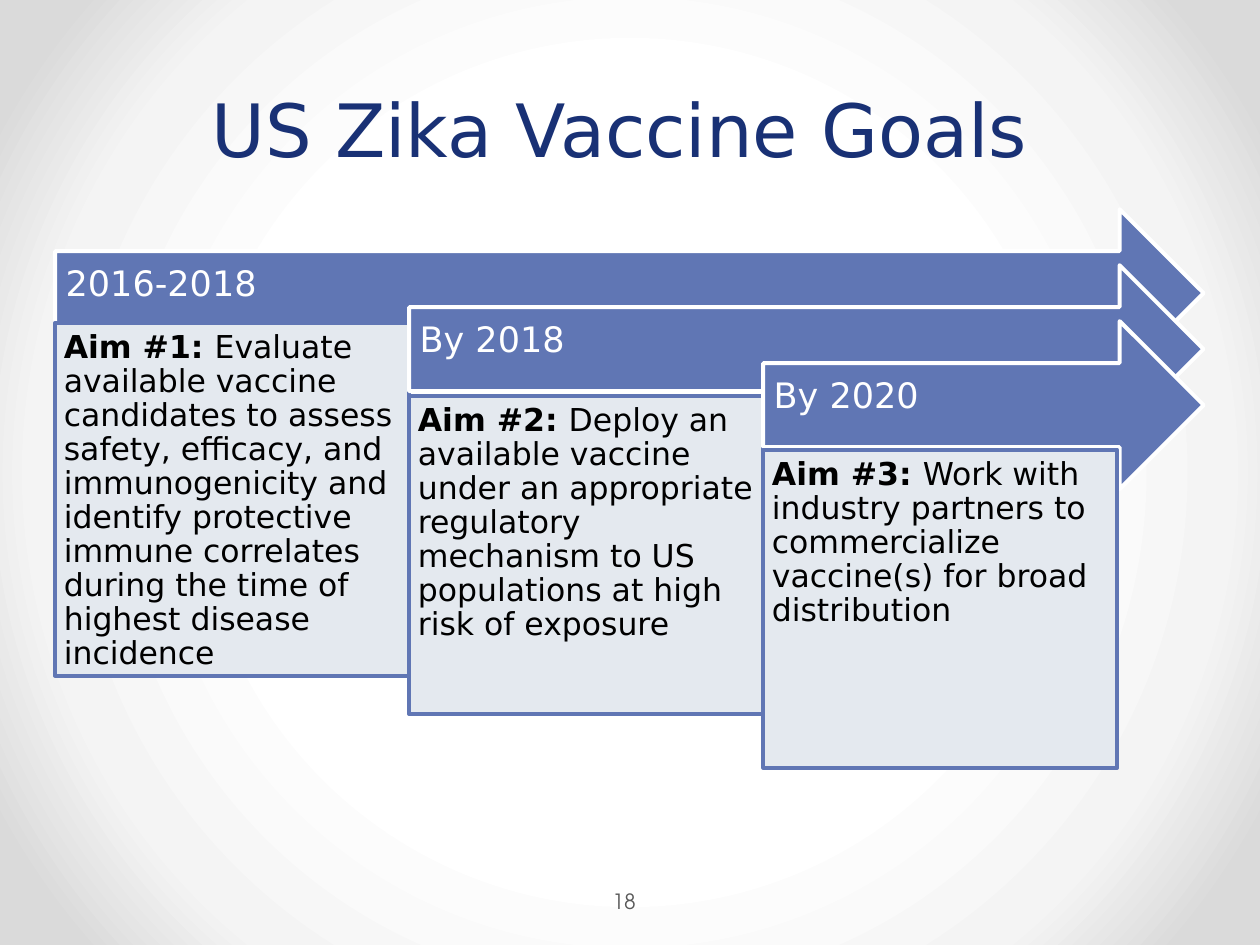
from lxml import etree
from pptx import Presentation
from pptx.dml.color import RGBColor
from pptx.enum.shapes import MSO_SHAPE as Shape
from pptx.enum.text import MSO_ANCHOR as Anchor, PP_ALIGN as Align
from pptx.oxml.ns import qn
from pptx.util import Pt

BODY_FONT = "DejaVu Sans"
NUMBER_FONT = "TeX Gyre Adventor"
BLUE, PALE, NAVY, GREY = "6076B4", "E4E9EF", "193175", "595959"
WHITE, BLACK = "FFFFFF", "000000"

BACKGROUND_STOPS = [(50, WHITE), (76, "F4F4F4"), (92, "DADADA")]

LEFT, RIGHT = 31.5, 687.8
COLUMN_WIDTH = 202.3
ARROW_TOP, ARROW_STEP, ARROW_HEIGHT = 119.5, 32, 96

# period, aim label, aim text, top and height of the aim box
GOALS = [
    ("2016-2018", "Aim #1: ",
     "Evaluate available vaccine candidates to assess safety, efficacy, and "
     "immunogenicity and identify protective immune correlates during the "
     "time of highest disease incidence", 184.4, 201.8),
    ("By 2018", "Aim #2: ",
     "Deploy an available vaccine under an appropriate regulatory mechanism "
     "to US populations at high risk of exposure", 226.2, 181.8),
    ("By 2020", "Aim #3: ",
     "Work with industry partners to commercialize vaccine(s) for broad "
     "distribution", 257, 181.8),
]


def color(hex_string):
    return RGBColor.from_string(hex_string)


def write(shape, runs, size, ink, font=BODY_FONT, align=Align.LEFT,
          anchor=Anchor.TOP, insets=(7.2, 3.6, 7.2, 3.6), spacing=None):
    """Fill a shape with one paragraph of (text, bold) runs."""
    frame = shape.text_frame
    frame.word_wrap = True
    frame.vertical_anchor = anchor
    (frame.margin_left, frame.margin_top,
     frame.margin_right, frame.margin_bottom) = map(Pt, insets)
    paragraph = frame.paragraphs[0]
    paragraph.alignment = align
    paragraph.line_spacing = spacing
    for text, bold in runs:
        run = paragraph.add_run()
        run.text = text
        run.font.name = font
        run.font.size = Pt(size)
        run.font.bold = bold
        run.font.color.rgb = color(ink)


def add_panel(slide, preset, box, fill, outline):
    panel = slide.shapes.add_shape(preset, *map(Pt, box))
    panel.shadow.inherit = False
    panel.fill.solid()
    panel.fill.fore_color.rgb = color(fill)
    panel.line.color.rgb = color(outline)
    panel.line.width = Pt(2.25)
    return panel


def paint_background(slide):
    """Radial gradient spreading from the centre of the slide."""
    slide.background.fill.gradient()
    gradient = slide.element.find(".//" + qn("a:gradFill"))
    for child in list(gradient):
        gradient.remove(child)
    stops = etree.SubElement(gradient, qn("a:gsLst"))
    for position, shade in BACKGROUND_STOPS:
        stop = etree.SubElement(stops, qn("a:gs"), pos=str(position * 1000))
        etree.SubElement(stop, qn("a:srgbClr"), val=shade)
    circle = etree.SubElement(gradient, qn("a:path"), path="circle")
    etree.SubElement(circle, qn("a:fillToRect"),
                     l="50000", t="50000", r="50000", b="50000")


def add_title(slide, box):
    title = slide.shapes.add_textbox(*map(Pt, box))
    write(title, [("US Zika Vaccine Goals", False)], 42, NAVY,
          align=Align.CENTER, anchor=Anchor.BOTTOM, spacing=Pt(58))


def add_page_number(slide, box):
    number = slide.shapes.add_textbox(*map(Pt, box))
    write(number, [("18", False)], 12, GREY, font=NUMBER_FONT,
          anchor=Anchor.MIDDLE, insets=(2.2, 3.6, 3.6, 3.6))


def add_period_arrow(slide, box, period):
    arrow = add_panel(slide, Shape.RIGHT_ARROW, box, BLUE, WHITE)
    write(arrow, [(period, False)], 20, WHITE, anchor=Anchor.MIDDLE,
          insets=(6, 6, 20, 15.1), spacing=0.9)


def add_aim_box(slide, box, label, aim):
    panel = add_panel(slide, Shape.RECTANGLE, box, PALE, BLUE)
    write(panel, [(label, True), (aim, False)], 18, BLACK,
          insets=(5, 5, 5, 5), spacing=0.9)


def add_timeline(slide, left, top, right):
    """Staggered arrows, each starting one column further right."""
    for step, (period, label, aim, aim_top, aim_height) in enumerate(GOALS):
        x = left + step * COLUMN_WIDTH
        add_period_arrow(
            slide, (x, top + step * ARROW_STEP, right - x, ARROW_HEIGHT), period)
        add_aim_box(slide, (x, aim_top, COLUMN_WIDTH, aim_height), label, aim)


def main():
    deck = Presentation()
    deck.slide_width, deck.slide_height = Pt(720), Pt(540)
    slide = deck.slides.add_slide(deck.slide_layouts[6])
    paint_background(slide)
    add_page_number(slide, (347.8, 500.4, 44, 28.8))
    add_title(slide, (30, 18, 648, 84))
    add_timeline(slide, LEFT, ARROW_TOP, RIGHT)
    deck.save("out.pptx")


if __name__ == "__main__":
    main()
